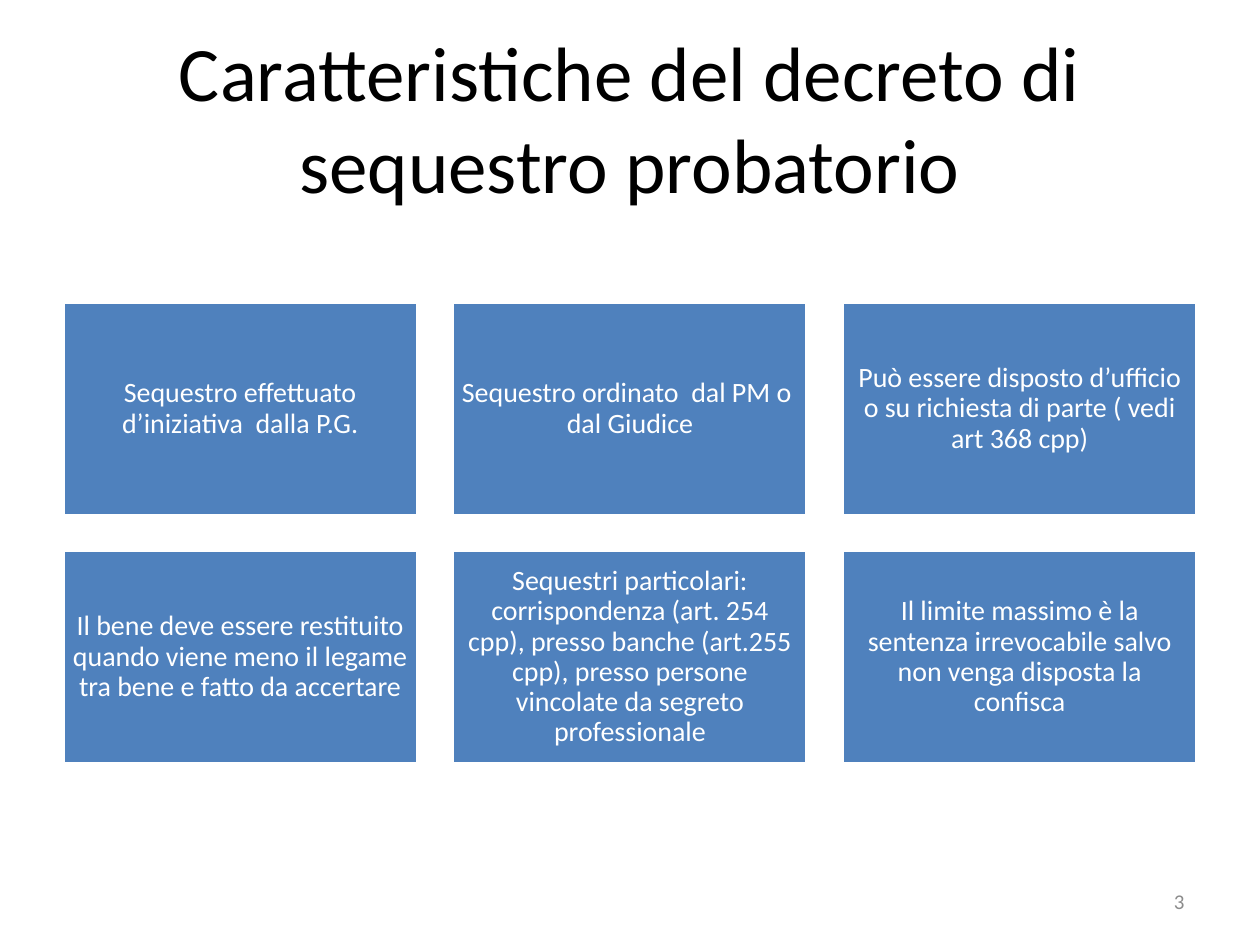
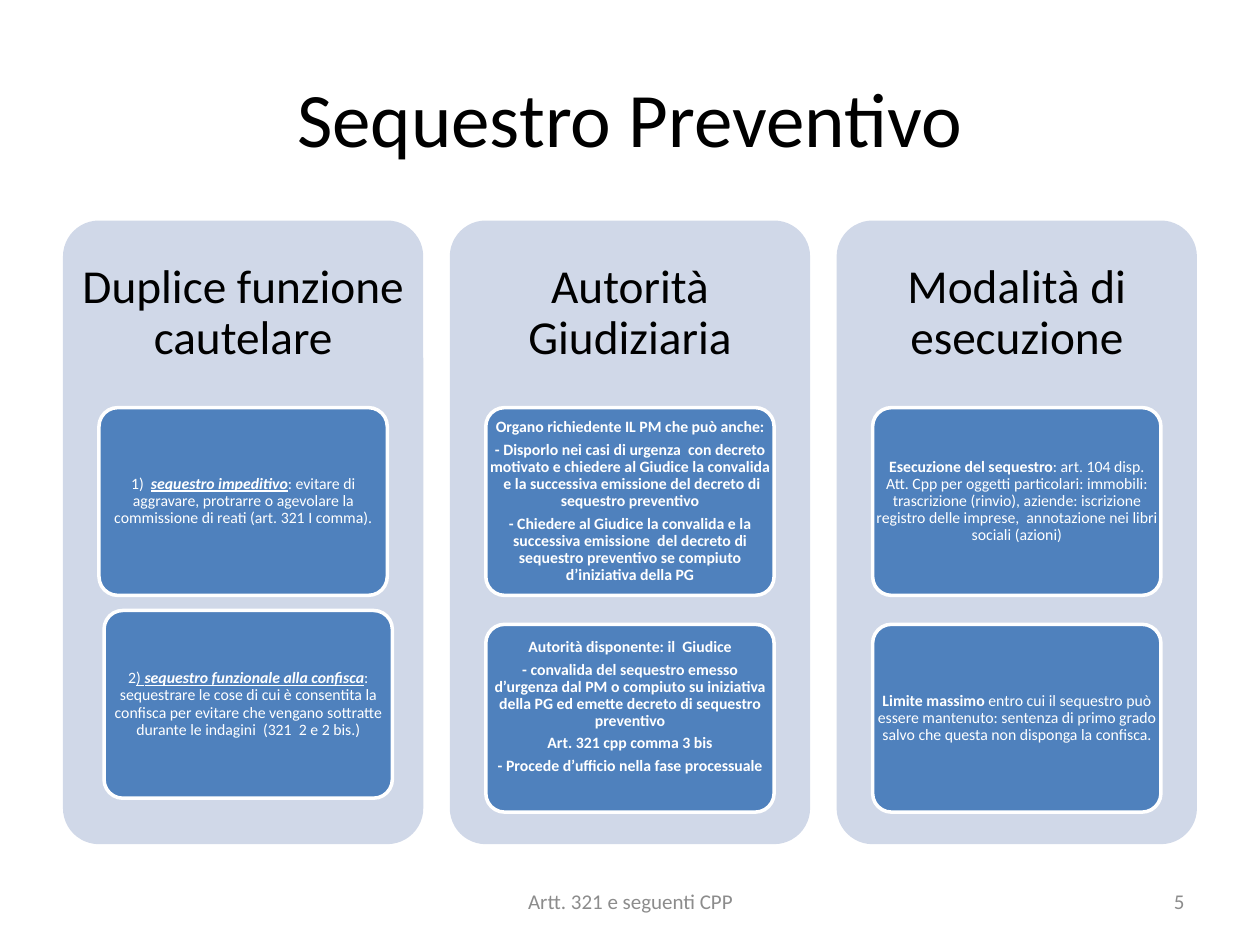
from dataclasses import dataclass
from typing import NamedTuple

from pptx import Presentation
from pptx.dml.color import RGBColor
from pptx.enum.shapes import MSO_SHAPE
from pptx.enum.text import MSO_ANCHOR, PP_ALIGN
from pptx.util import Inches, Pt

RECTANGLE, ROUNDED = MSO_SHAPE.RECTANGLE, MSO_SHAPE.ROUNDED_RECTANGLE
CENTER, RIGHT = PP_ALIGN.CENTER, PP_ALIGN.RIGHT
MIDDLE = MSO_ANCHOR.MIDDLE

FONT = "Calibri"
COLORS = {"ink": "000000", "white": "FFFFFF", "blue": "4F81BD",
          "pale": "D0D8E8", "gray": "8C8C8C"}
WIDTH, HEIGHT, MARGIN = 10, 7.5, 0.5
CONTENT = WIDTH - 2 * MARGIN


class Box(NamedTuple):
    left: float
    top: float
    width: float
    height: float


class Span(NamedTuple):
    text: str
    bold: bool = False
    italic: bool = False
    underline: bool = False


class Inset(NamedTuple):
    side: float = 0.1
    top: float = 0.05
    bottom: float = 0.05


class Style(NamedTuple):
    size: float
    color: str
    align: PP_ALIGN = CENTER
    inset: Inset = Inset()
    line_spacing: float = 1.0
    after: float = 0.0  # share of the text size


@dataclass(frozen=True)
class Grid:
    top: float
    row_height: float
    gap: float
    columns: int = 3

    def cell(self, index: int) -> Box:
        row, column = divmod(index, self.columns)
        width = (CONTENT - (self.columns - 1) * self.gap) / self.columns
        return Box(MARGIN + column * (width + self.gap),
                   self.top + row * (self.row_height + self.gap),
                   width, self.row_height)


Paragraphs = list[list[Span]]


@dataclass(frozen=True)
class Card:
    paragraphs: Paragraphs
    shift: tuple[float, float] = (0, 0)
    inset: Inset = Inset(0.03, 0.02, 0.02)


@dataclass(frozen=True)
class Column:
    heading: str
    cards: tuple[Card, Card]


TITLE_BOX = Box(MARGIN, HEIGHT * 0.04, CONTENT, 1.25)
FOOTER_BOX = Box(3.42, 6.95, 3.17, 0.4)
NUMBER_BOX = Box(7.17, 6.95, 2.33, 0.4)

TITLE = Style(44, "ink")
FOOTER = Style(12, "gray")
NUMBER = FOOTER._replace(align=RIGHT)
TILE = Style(16, "white", CENTER, Inset(0.07, 0.07, 0.07), 0.9, 0.35)
HEADING = TILE._replace(size=27, color="ink", inset=Inset(0.11, 0.11, 0.11))
CARD = TILE._replace(size=9)

TILE_GRID = Grid(top=2.4, row_height=1.69, gap=0.28)
COLUMN_GRID = Grid(top=1.75, row_height=4.95, gap=0.21)
HEADING_SHARE, CARD_SHARE = 0.3, 0.8
CARD_HEIGHT, CARD_GAP = 1.49, 0.23

FEATURES = [
    "Sequestro effettuato d’iniziativa  dalla P.G.",
    "Sequestro ordinato  dal PM o  dal Giudice",
    "Può essere disposto d’ufficio o su richiesta di parte ( vedi art 368 cpp)",
    "Il bene deve essere restituito quando viene meno il legame tra bene e "
    "fatto da accertare",
    "Sequestri particolari: corrispondenza (art. 254 cpp), presso banche "
    "(art.255 cpp), presso persone vincolate da segreto professionale",
    "Il limite massimo è la sentenza irrevocabile salvo non venga disposta la "
    "confisca",
]


def plain(text: str) -> Paragraphs:
    return [[Span(text)]]


def bold_lines(*lines: str) -> Paragraphs:
    return [[Span(line, bold=True)] for line in lines]


COLUMNS = [
    Column("Duplice funzione cautelare", (
        Card([[Span("1)  "),
               Span("sequestro impeditivo", True, True, True),
               Span(": evitare di aggravare, protrarre o agevolare la "
                    "commissione di reati (art. 321 I comma).")]]),
        Card([[Span("2"),
               Span(") ", underline=True),
               Span("sequestro funzionale alla confisca", True, True, True),
               Span(": sequestrare le cose di cui è consentita la confisca per "
                    "evitare che vengano sottratte durante le indagini  "
                    "(321  2 e 2 bis.)")]], shift=(0.04, -0.11)),
    )),
    Column("Autorità Giudiziaria", (
        Card(bold_lines(
            "Organo richiedente IL PM che può anche:",
            "- Disporlo nei casi di urgenza  con decreto motivato e chiedere al "
            "Giudice la convalida  e la successiva emissione del decreto di "
            "sequestro preventivo",
            "- Chiedere al Giudice la convalida e la successiva emissione  del "
            "decreto di sequestro preventivo se compiuto d’iniziativa della PG")),
        Card(bold_lines(
            "Autorità disponente: il  Giudice",
            "- convalida del sequestro emesso d’urgenza dal PM o compiuto su "
            "iniziativa della PG ed emette decreto di sequestro preventivo",
            "Art. 321 cpp comma 3 bis",
            "- Procede d’ufficio nella fase processuale"),
            inset=Inset(0.03, 0.02, 0.2)),
    )),
    Column("Modalità di esecuzione", (
        Card([[Span("Esecuzione del sequestro", bold=True),
               Span(": art. 104 disp. Att. Cpp per oggetti particolari: "
                    "immobili: trascrizione (rinvio), aziende: iscrizione "
                    "registro delle imprese,  annotazione nei libri sociali "
                    "(azioni)")]]),
        Card([[Span("Limite massimo ", bold=True),
               Span("entro cui il sequestro può essere mantenuto: sentenza di "
                    "primo grado salvo che questa non disponga la confisca.")]]),
    )),
]


def rgb(name: str) -> RGBColor:
    return RGBColor.from_string(COLORS[name])


def write(frame, paragraphs: Paragraphs, style: Style) -> None:
    frame.word_wrap = True
    frame.vertical_anchor = MIDDLE
    frame.margin_left = frame.margin_right = Inches(style.inset.side)
    frame.margin_top = Inches(style.inset.top)
    frame.margin_bottom = Inches(style.inset.bottom)
    for index, spans in enumerate(paragraphs):
        para = frame.add_paragraph() if index else frame.paragraphs[0]
        para.alignment = style.align
        para.line_spacing = style.line_spacing
        para.space_after = Pt(style.size * style.after)
        for span in spans:
            run = para.add_run()
            run.text = span.text
            font = run.font
            font.name, font.size = FONT, Pt(style.size)
            font.color.rgb = rgb(style.color)
            font.bold, font.italic = span.bold, span.italic
            font.underline = span.underline


def add_text(page, box: Box, paragraphs: Paragraphs, style: Style) -> None:
    text_box = page.shapes.add_textbox(*map(Inches, box))
    write(text_box.text_frame, paragraphs, style)


def add_panel(page, kind: MSO_SHAPE, box: Box, fill: str, outlined: bool = True):
    panel = page.shapes.add_shape(kind, *map(Inches, box))
    panel.shadow.inherit = False
    panel.fill.solid()
    panel.fill.fore_color.rgb = rgb(fill)
    if outlined:
        panel.line.color.rgb = rgb("white")
        panel.line.width = Pt(2)
    else:
        panel.line.fill.background()
    if kind == ROUNDED:
        panel.adjustments[0] = 0.1
    return panel


def add_page(deck, title: str, number: int, footer: str = ""):
    page = deck.slides.add_slide(deck.slide_layouts[6])
    add_text(page, TITLE_BOX, plain(title), TITLE)
    if footer:
        add_text(page, FOOTER_BOX, plain(footer), FOOTER)
    add_text(page, NUMBER_BOX, plain(str(number)), NUMBER)
    return page


def add_column(page, box: Box, column: Column) -> None:
    """Draw a pale panel with its heading and two stacked cards."""
    add_panel(page, ROUNDED, box, "pale", outlined=False)
    heading_height = box.height * HEADING_SHARE
    add_text(page, box._replace(height=heading_height),
             plain(column.heading), HEADING)
    for row, card in enumerate(column.cards):
        across, down = card.shift
        card_box = Box(box.left + box.width * (1 - CARD_SHARE) / 2 + across,
                       box.top + heading_height
                       + row * (CARD_HEIGHT + CARD_GAP) + down,
                       box.width * CARD_SHARE, CARD_HEIGHT)
        add_panel(page, ROUNDED, card_box, "blue")
        add_text(page, card_box, card.paragraphs, CARD._replace(inset=card.inset))


def main() -> None:
    deck = Presentation()
    deck.slide_width, deck.slide_height = Inches(WIDTH), Inches(HEIGHT)

    page = add_page(deck, "Caratteristiche del decreto di sequestro probatorio", 3)
    for index, feature in enumerate(FEATURES):
        tile = add_panel(page, RECTANGLE, TILE_GRID.cell(index), "blue")
        write(tile.text_frame, plain(feature), TILE)

    page = add_page(deck, "Sequestro Preventivo", 5, "Artt. 321 e seguenti CPP")
    for index, column in enumerate(COLUMNS):
        add_column(page, COLUMN_GRID.cell(index), column)

    deck.save("out.pptx")


if __name__ == "__main__":
    main()
